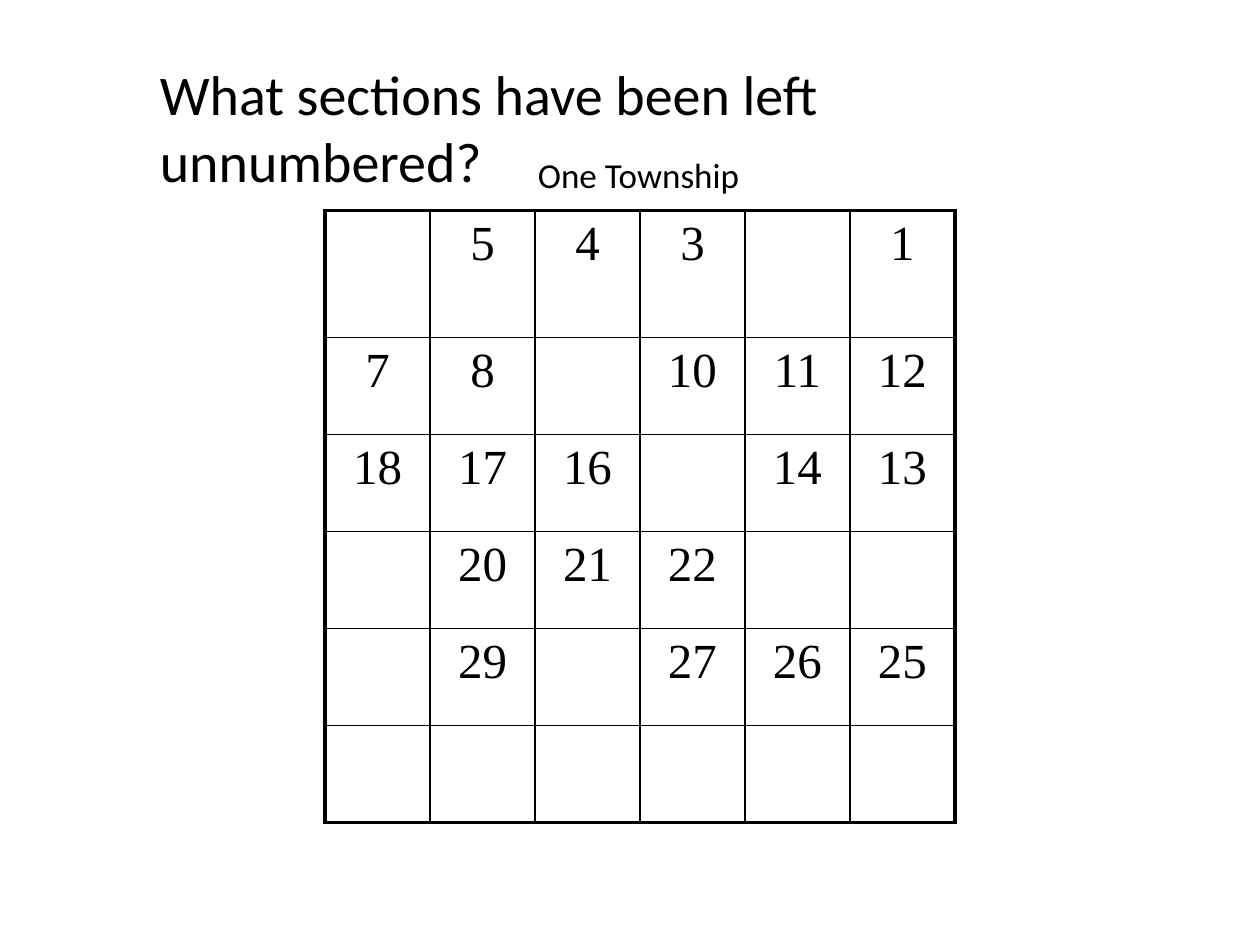
from dataclasses import dataclass

import pptx
import pptx.dml.color
import pptx.enum.text
import pptx.util
from lxml import etree
from pptx.oxml.ns import qn

Inches, Pt = pptx.util.Inches, pptx.util.Pt

COLORS = {"ink": "000000"}
SLIDE_W, SLIDE_H = 10, 7.5
GRID = 6
FIRST_ROW, OTHER_ROW, COLUMN = 1.01, 0.77, 5 / GRID
THIN, THICK = 1, 2.25
UNNUMBERED = {2, 6, 9, 15, 19, 23, 24, 28, 30, *range(31, 37)}


@dataclass
class Label:
    text: str
    left: float
    top: float
    width: float
    height: float
    size: int
    wrap: bool


LABELS = [
    Label("One Township", 4.17, 1.17, 1.85, 0.43, 20, False),
    Label("What sections have been left unnumbered?", 1.17, 0.42, 7.85, 0.63, 32, True),
]


def add_run(paragraph, text: str, size: int, font: str) -> None:
    run = paragraph.add_run()
    run.text = text
    run.font.size = Pt(size)
    run.font.name = font
    run.font.color.rgb = pptx.dml.color.RGBColor.from_string(COLORS["ink"])


def section_number(row: int, col: int) -> int:
    """Sections run from the top right corner, back and forth by row."""
    step = GRID - col if row % 2 == 0 else col + 1
    return row * GRID + step


def set_borders(cell, row: int, col: int) -> None:
    """Thick on the township's outline, thin inside."""
    outer = {"L": col == 0, "R": col == GRID - 1, "T": row == 0, "B": row == GRID - 1}
    properties = cell._tc.get_or_add_tcPr()
    for position, (side, is_outer) in enumerate(outer.items()):
        width = Pt(THICK if is_outer else THIN)
        line = etree.Element(qn(f"a:ln{side}"), w=str(int(width)))
        fill = etree.SubElement(line, qn("a:solidFill"))
        etree.SubElement(fill, qn("a:srgbClr"), val=COLORS["ink"])
        properties.insert(position, line)


def add_township(slide) -> None:
    height = FIRST_ROW + OTHER_ROW * (GRID - 1)
    township = slide.shapes.add_table(
        GRID, GRID, Inches(2.58), Inches(1.67), Inches(COLUMN * GRID), Inches(height)
    ).table
    township.first_row = township.horz_banding = False
    for column in township.columns:
        column.width = Inches(COLUMN)
    for row in range(GRID):
        township.rows[row].height = Inches(OTHER_ROW if row else FIRST_ROW)
        for col in range(GRID):
            cell = township.cell(row, col)
            cell.fill.background()
            set_borders(cell, row, col)
            number = section_number(row, col)
            if number not in UNNUMBERED:
                paragraph = cell.text_frame.paragraphs[0]
                paragraph.alignment = pptx.enum.text.PP_ALIGN.CENTER
                add_run(paragraph, str(number), 28, "Times New Roman")


def add_label(slide, label: Label) -> None:
    frame = slide.shapes.add_textbox(
        Inches(label.left), Inches(label.top), Inches(label.width), Inches(label.height)
    ).text_frame
    frame.word_wrap = label.wrap
    frame.auto_size = pptx.enum.text.MSO_AUTO_SIZE.SHAPE_TO_FIT_TEXT
    add_run(frame.paragraphs[0], label.text, label.size, "Calibri")


def main() -> None:
    deck = pptx.Presentation()
    deck.slide_width, deck.slide_height = Inches(SLIDE_W), Inches(SLIDE_H)
    slide = deck.slides.add_slide(deck.slide_layouts[6])
    add_township(slide)
    for label in LABELS:
        add_label(slide, label)
    deck.save("out.pptx")


if __name__ == "__main__":
    main()
